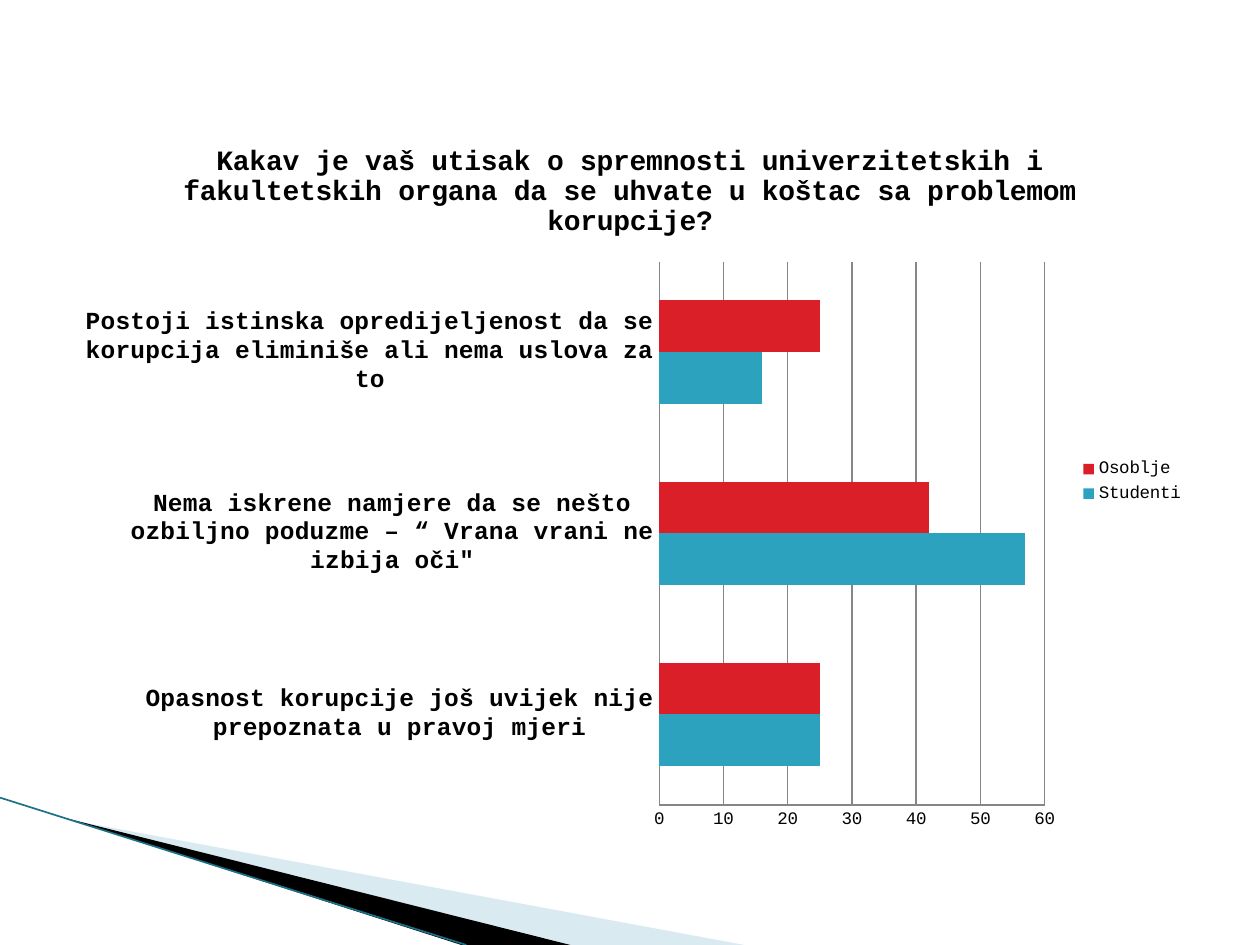
import pptx
import pptx.chart.data
import pptx.dml.color
import pptx.enum.chart
import pptx.enum.shapes
import pptx.oxml.ns
import pptx.util
from lxml import etree

Cm = pptx.util.Cm
Pt = pptx.util.Pt
qn = pptx.oxml.ns.qn
FACE = "Courier New"
GREY = "868686"

TITLE = ("Kakav je vaš utisak o spremnosti univerzitetskih i fakultetskih "
         "organa da se uhvate u koštac sa problemom korupcije?")
CATS = [
    "Opasnost korupcije još uvijek nije prepoznata u pravoj mjeri",
    "Nema iskrene namjere da se nešto ozbiljno poduzme – “ Vrana vrani ne izbija oči\"",
    "Postoji istinska opredijeljenost da se korupcija eliminiše ali nema uslova za to",
]
SERIES = [
    ("Studenti", (25, 57, 16), "2DA2BF"),
    ("Osoblje", (25, 42, 25), "DA1F28"),
]


def paint(part, color):
    """Give a fill, or the fill of a line, a solid colour."""
    part.solid()
    part.fore_color.rgb = pptx.dml.color.RGBColor.from_string(color)


def style(font, size, bold=False):
    for name, value in {"name": FACE, "size": Pt(size), "bold": bold}.items():
        setattr(font, name, value)
    paint(font.fill, "000000")


def reframe(shape, box):
    """Change the frame of a freeform and leave its outline in place."""
    left, top, width, height = (Cm(side) for side in box)
    route = shape._element.find(".//" + qn("a:path"))
    for spot in route.iter(qn("a:pt")):
        spot.set("x", str(int(spot.get("x")) + shape.left - left))
        spot.set("y", str(int(spot.get("y")) + shape.top - top))
    route.set("w", str(width))
    route.set("h", str(height))
    for name, value in {"left": left, "top": top,
                        "width": width, "height": height}.items():
        setattr(shape, name, value)


def wedge(slide, left, top, points, box, color, alpha=100):
    spots = [(Cm(left + x), Cm(top + y)) for x, y in points]
    build = slide.shapes.build_freeform(*spots[0])
    build.add_line_segments(spots[1:], close=True)
    shape = build.convert_to_shape()
    reframe(shape, (left + box[0], top + box[1], *box[2:]))
    shape.shadow.inherit = False
    paint(shape.fill, color)
    shape.line.fill.background()
    if alpha < 100:
        tint = shape.fill._xPr.find(".//" + qn("a:srgbClr"))
        etree.SubElement(tint, qn("a:alpha")).set("val", str(alpha * 1000))


def corner(slide, left, top, width, height):
    """Draw the wedges and the edge line at the foot of the slide."""
    wedge(slide, left, top,
          [(1.4, 0.45), (width, height), (11.5, height)],
          (1.98, -2.19, 10.57, 4.01), "A0CBDC", 40)
    wedge(slide, left, top,
          [(1.35, 0.42), (11.5, height), (9.3, height)],
          (-0.15, 0, 10.57, 2.34), "000000")
    edge = slide.shapes.add_connector(
        pptx.enum.shapes.MSO_CONNECTOR.STRAIGHT,
        Cm(left), Cm(top), Cm(left + 9.4), Cm(top + height))
    edge.line.width = Pt(0.95)
    paint(edge.line.fill, "1B7187")
    etree.SubElement(edge._element.spPr, qn("a:effectLst"))


def bars(slide, left, top, width, height):
    """Place the bar chart with its title and legend."""
    data = pptx.chart.data.CategoryChartData()
    data.categories = CATS
    for name, values, _ in SERIES:
        data.add_series(name, values)
    chart = slide.shapes.add_chart(
        pptx.enum.chart.XL_CHART_TYPE.BAR_CLUSTERED,
        Cm(left), Cm(top), Cm(width), Cm(height), data).chart
    style(chart.font, 10)

    # Title
    chart.has_title = True
    chart.chart_title.include_in_layout = False
    frame = chart.chart_title.text_frame
    frame.text = TITLE
    style(frame.paragraphs[0].runs[0].font, 16, True)

    # Legend
    chart.has_legend = True
    chart.legend.position = pptx.enum.chart.XL_LEGEND_POSITION.RIGHT
    chart.legend.include_in_layout = False
    style(chart.legend.font, 10)

    # Axes
    for axis, size, bold in ((chart.category_axis, 14, True),
                             (chart.value_axis, 10, False)):
        axis.major_tick_mark = pptx.enum.chart.XL_TICK_MARK.NONE
        axis.minor_tick_mark = pptx.enum.chart.XL_TICK_MARK.NONE
        style(axis.tick_labels.font, size, bold)
        paint(axis.format.line.fill, GREY)
    scale = chart.value_axis
    for name, value in {"minimum_scale": 0, "maximum_scale": 60,
                        "major_unit": 10, "has_major_gridlines": True}.items():
        setattr(scale, name, value)
    scale.format.line.width = Pt(0.75)
    paint(scale.major_gridlines.format.line.fill, GREY)

    # Bars
    plot = chart.plots[0]
    for name, value in {"gap_width": 150, "overlap": 0,
                        "vary_by_categories": False}.items():
        setattr(plot, name, value)
    for row, (_, _, color) in zip(plot.series, SERIES):
        paint(row.format.fill, color)


def main():
    deck = pptx.Presentation()
    deck.slide_width, deck.slide_height = Cm(25.4), Cm(19.05)
    slide = deck.slides.add_slide(deck.slide_layouts[6])
    corner(slide, 0, 16.08, 15, 2.97)
    bars(slide, 1.27, 2.39, 22.86, 14.63)
    deck.save("out.pptx")


if __name__ == "__main__":
    main()
